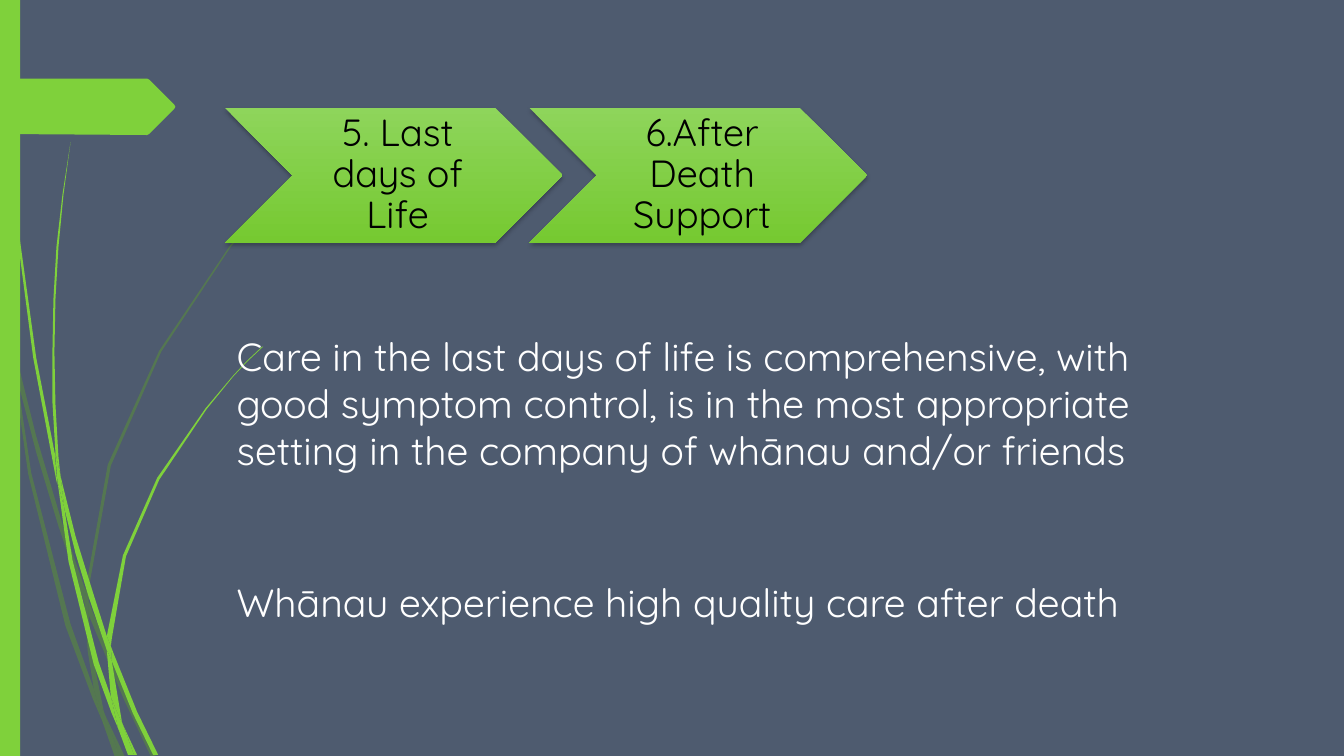
from dataclasses import dataclass

from lxml import etree
from pptx import Presentation
from pptx.dml.color import RGBColor
from pptx.enum.shapes import MSO_SHAPE
from pptx.enum.text import MSO_ANCHOR, PP_ALIGN
from pptx.oxml.ns import qn
from pptx.util import Pt

RECTANGLE, CHEVRON = MSO_SHAPE.RECTANGLE, MSO_SHAPE.CHEVRON
CENTER, LEFT = PP_ALIGN.CENTER, PP_ALIGN.LEFT
MIDDLE, TOP = MSO_ANCHOR.MIDDLE, MSO_ANCHOR.TOP

FONT = "Quicksand"
SLATE, LIME, MOSS = "4E5B6F", "7FD13B", "5FA326"
LIME_TOP, LIME_BOTTOM = "8ED55B", "76C931"
BLACK, WHITE = "000000", "FFFFFF"
GRID = Pt(0.72)  # one unit of the outlines below

Outline = list[tuple[int, int]]


@dataclass
class Step:
    label: str
    left: float


@dataclass
class Statement:
    words: str
    top: float
    width: float
    height: float


STEPS = [Step("5. Last days of Life", 160.7), Step("6.After Death Support", 378.2)]
STATEMENTS = [
    Statement("Care in the last days of life is comprehensive, with good symptom control, "
              "is in the most appropriate setting in the company of whānau and/or friends",
              234, 677.5, 143.3),
    Statement("Whānau experience high quality care after death", 409.7, 707.8, 41),
]

PALE_WISPS: list[Outline] = [
    [(11, 350), (9, 322), (0, 282), (0, 299), (10, 344)],
    [(58, 522), (84, 599), (85, 586), (62, 520), (36, 433), (14, 345), (17, 376), (36, 449)],
    [(92, 607), (88, 596), (88, 610), (123, 694), (150, 751), (155, 751), (127, 692)],
    [(119, 751), (124, 751), (105, 711)],
    [(93, 683), (70, 619), (31, 469), (17, 376), (11, 350), (28, 470), (65, 621),
     (92, 693), (101, 714), (99, 707)],
    [(84, 599), (87, 646), (93, 683), (96, 692), (105, 711), (103, 706), (91, 646),
     (88, 610), (88, 608)],
    [(88, 584), (110, 462), (160, 349), (229, 245), (268, 198), (290, 175), (312, 154),
     (312, 153), (289, 175), (268, 197), (228, 244), (158, 348), (107, 461), (85, 584),
     (85, 586), (88, 596)],
    [(101, 714), (114, 751), (119, 751)],
    [(88, 608), (88, 610), (88, 596), (85, 586), (84, 599)],
    [(96, 692), (93, 683), (99, 707), (101, 714), (119, 751), (105, 711)],
]
BRIGHT_WISPS: list[Outline] = [
    [(7, 110), (17, 233), (33, 355), (56, 477), (57, 481), (55, 457), (55, 453), (36, 355),
     (19, 232), (8, 109), (5, 48), (4, 0), (3, 0), (4, 48)],
    [(88, 592), (106, 645), (106, 633), (106, 631), (93, 590), (75, 532), (60, 472),
     (64, 505), (75, 549)],
    [(113, 649), (110, 641), (111, 656), (132, 708), (152, 749), (157, 749), (136, 706)],
    [(110, 691), (98, 657), (72, 556), (64, 505), (57, 477), (68, 557), (93, 659),
     (111, 708), (117, 722), (116, 717)],
    [(60, 472), (58, 453), (55, 401), (54, 349), (55, 297), (58, 245), (63, 193), (70, 141),
     (62, 193), (56, 245), (53, 297), (52, 349), (52, 399), (55, 449)],
    [(133, 749), (136, 749), (122, 719)],
    [(57, 477), (64, 505), (60, 472), (55, 449), (55, 453)],
    [(111, 633), (125, 552), (158, 476), (205, 406), (231, 374), (245, 359), (261, 344),
     (260, 344), (245, 358), (231, 373), (204, 405), (156, 474), (122, 551), (106, 631),
     (110, 641)],
    [(117, 722), (127, 749), (131, 749)],
    [(106, 645), (110, 691), (116, 706), (122, 719), (121, 716), (111, 656), (109, 651)],
    [(106, 645), (109, 651), (111, 656), (110, 641), (106, 631), (106, 633)],
    [(116, 706), (110, 691), (116, 717), (117, 722), (130, 749), (133, 749), (122, 719)],
]
PAGE_TAG: Outline = [(0, 78), (146, 78), (148, 79), (173, 104), (174, 106), (173, 108),
                     (148, 133), (146, 134), (0, 133)]


def rgb(color: str) -> RGBColor:
    return RGBColor.from_string(color)


def paint(shape, color: str, opacity: int = 100) -> None:
    shape.shadow.inherit = False
    shape.line.fill.background()
    shape.fill.solid()
    shape.fill.fore_color.rgb = rgb(color)
    if opacity < 100:
        tint = shape.fill._xPr.find(".//" + qn("a:srgbClr"))
        etree.SubElement(tint, qn("a:alpha"), val=str(opacity * 1000))


def draw_outline(slide, outline: Outline, color: str, opacity: int = 100) -> None:
    builder = slide.shapes.build_freeform(*outline[0], scale=GRID)
    builder.add_line_segments(outline[1:], close=True)
    paint(builder.convert_to_shape(), color, opacity)


def write(frame, words: str, size: float, color: str, align, anchor) -> None:
    frame.word_wrap = True
    frame.vertical_anchor = anchor
    paragraph = frame.paragraphs[0]
    paragraph.text = words
    paragraph.alignment = align
    paragraph.font.name = FONT
    paragraph.font.size = Pt(size)
    paragraph.font.color.rgb = rgb(color)


def drop_shadow(shape) -> None:
    shape.shadow.inherit = False
    effects = shape._element.spPr.find(qn("a:effectLst"))
    shadow = etree.SubElement(effects, qn("a:outerShdw"), blurRad=str(Pt(3)),
                              dist=str(Pt(2)), dir="5400000", rotWithShape="0")
    tint = etree.SubElement(shadow, qn("a:srgbClr"), val=BLACK)
    etree.SubElement(tint, qn("a:alpha"), val="25000")


def draw_step(slide, step: Step) -> None:
    chevron = slide.shapes.add_shape(CHEVRON, Pt(step.left), Pt(77), Pt(241.2), Pt(96.5))
    chevron.line.fill.background()
    chevron.fill.gradient()
    chevron.fill.gradient_angle = 270
    for stop, color in zip(chevron.fill.gradient_stops, (LIME_TOP, LIME_BOTTOM)):
        stop.color.rgb = rgb(color)
    drop_shadow(chevron)
    frame = chevron.text_frame
    frame.margin_left = Pt(8.5)
    frame.margin_right = frame.margin_top = frame.margin_bottom = Pt(3)
    write(frame, step.label, 27, BLACK, CENTER, MIDDLE)
    frame.paragraphs[0].line_spacing = 0.9


def draw_statement(slide, statement: Statement) -> None:
    box = slide.shapes.add_textbox(Pt(162), Pt(statement.top), Pt(statement.width),
                                   Pt(statement.height))
    write(box.text_frame, statement.words, 28, WHITE, LEFT, TOP)


def main() -> None:
    deck = Presentation()
    deck.slide_width, deck.slide_height = Pt(960), Pt(540)
    slide = deck.slides.add_slide(deck.slide_layouts[6])
    slide.background.fill.solid()
    slide.background.fill.fore_color.rgb = rgb(SLATE)

    # Grass wisps, side band and page tag
    for wisp in PALE_WISPS:
        draw_outline(slide, wisp, MOSS, 40)
    for wisp in BRIGHT_WISPS:
        draw_outline(slide, wisp, LIME)
    side_band = slide.shapes.add_shape(RECTANGLE, 0, 0, Pt(14.4), Pt(540))
    paint(side_band, LIME)
    draw_outline(slide, PAGE_TAG, LIME)

    # Steps and what they mean
    for step in STEPS:
        draw_step(slide, step)
    for statement in STATEMENTS:
        draw_statement(slide, statement)

    deck.save("out.pptx")


if __name__ == "__main__":
    main()
